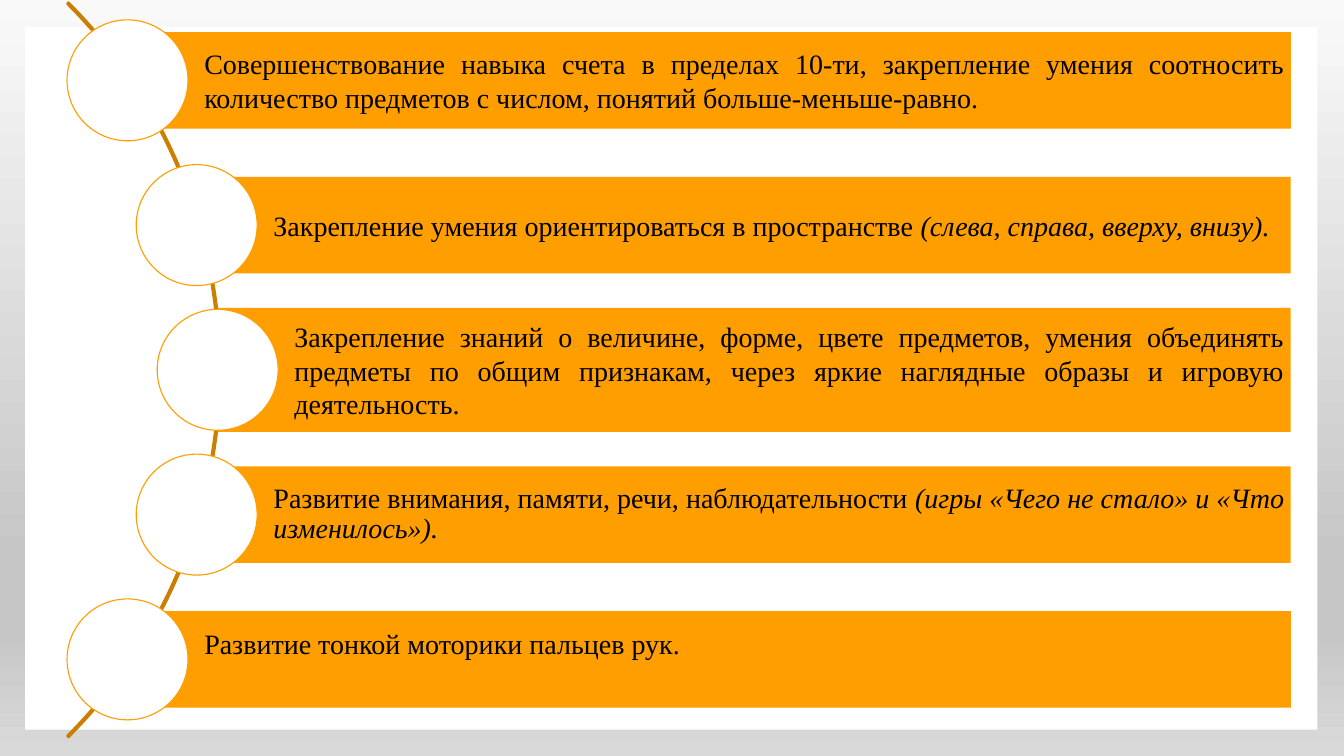
import copy
import math
from pptx import Presentation
from pptx import util as u
from pptx.dml.color import RGBColor
from pptx.enum import shapes, text
from pptx.oxml.ns import qn

COLOURS = {"panel": "FFFFFF", "bar": "FE9E00", "arc": "CB7F00", "ink": "000000"}
BACKDROP = [(0, "F9F9F9"), (0.74, "C6C6C7"), (0.83, "C6C6C7"), (1, "D9D9DA")]
FONT = {"name": "Times New Roman", "size": u.Pt(20)}
GOALS = [
    {"plain": "Совершенствование навыка счета в пределах 10-ти, закрепление умения "
              "соотносить количество предметов с числом, понятий больше-меньше-равно."},
    {"plain": "Закрепление умения ориентироваться в пространстве ",
     "italic": "(слева, справа, вверху, внизу)."},
    {"plain": "Закрепление знаний о величине, форме, цвете предметов, умения объединять "
              "предметы по общим признакам, через яркие наглядные образы и игровую "
              "деятельность.", "height": 88.6},
    {"plain": "Развитие внимания, памяти, речи, наблюдательности ",
     "italic": "(игры «Чего не стало» и «Что изменилось»).", "spacing": 0.9},
    {"plain": "Развитие тонкой моторики пальцев рук.", "bottom": 28},
]


def style(target, values):
    """Set every attribute in values on target."""
    for name, value in values.items():
        setattr(target, name, value)


def add_shape(page, kind, box, fill, line=None, width=0):
    """Add a flat shape in box, given as left, top, width, height in points."""
    shape = page.shapes.add_shape(kind, *[u.Pt(length) for length in box])
    shape.shadow.inherit = False
    shape.fill.solid()
    shape.fill.fore_color.rgb = RGBColor.from_string(COLOURS[fill])
    if line:
        shape.line.color.rgb = RGBColor.from_string(COLOURS[line])
        shape.line.width = u.Pt(width)
    else:
        shape.line.fill.background()
    return shape


def paint_backdrop(page):
    """Fill the page with the vertical grey gradient."""
    fill = page.background.fill
    fill.gradient()
    fill.gradient_angle = 270
    stop_list = next(page.element.iter(qn("a:gsLst")))
    while len(stop_list) < len(BACKDROP):
        stop_list.append(copy.deepcopy(stop_list[0]))
    for stop, (position, colour) in zip(fill.gradient_stops, BACKDROP):
        stop.position = position
        stop.color.rgb = RGBColor.from_string(colour)


def add_arc(page, centre_x, centre_y, radius):
    """Draw the thin arc that links the circles."""
    box = (centre_x - radius, centre_y - radius, 2 * radius, 2 * radius)
    arc = add_shape(page, shapes.MSO_SHAPE.BLOCK_ARC, box, "arc", "arc", 1.5)
    for index, value in enumerate((189, 27, 0.002)):
        arc.adjustments[index] = value


def add_goal(page, box, goal, diameter):
    """Draw one bar with its text, and the circle on its left end."""
    left, top, width, height = box
    bar = add_shape(page, shapes.MSO_SHAPE.RECTANGLE, box, "bar")
    frame = bar.text_frame
    style(frame, {"word_wrap": True, "vertical_anchor": text.MSO_ANCHOR.MIDDLE,
                  "margin_left": u.Pt(54.8), "margin_right": u.Pt(4.6),
                  "margin_top": u.Pt(4.6), "margin_bottom": u.Pt(goal.get("bottom", 4.6))})
    para = frame.paragraphs[0]
    style(para, {"alignment": text.PP_ALIGN.JUSTIFY, "line_spacing": goal.get("spacing", 1.0)})
    for part in ("plain", "italic"):
        if part in goal:
            span = para.add_run()
            span.text = goal[part]
            style(span.font, {**FONT, "italic": part == "italic"})
            span.font.color.rgb = RGBColor.from_string(COLOURS["ink"])
    circle = (left - diameter / 2, top + (height - diameter) / 2, diameter, diameter)
    add_shape(page, shapes.MSO_SHAPE.OVAL, circle, "panel", "bar", 0.79)


def add_goal_list(page, box, pitch=103.4, radius=364.2):
    """Stack the goals in box, with their left ends along a curve."""
    left, top, width, height = box
    middle = top + height / 2
    add_arc(page, -213.5, middle, 371.2)
    for index, goal in enumerate(GOALS):
        offset = (index - len(GOALS) // 2) * pitch
        start = left + math.sqrt(radius ** 2 - offset ** 2) - radius
        bar_height = goal.get("height", 69)
        bar = (start, middle + offset - bar_height / 2, left + width - start, bar_height)
        add_goal(page, bar, goal, 86.4)


def main():
    """Build the deck and save it."""
    deck = Presentation()
    style(deck, {"slide_width": u.Pt(960), "slide_height": u.Pt(540)})
    page = deck.slides.add_slide(deck.slide_layouts[6])
    paint_backdrop(page)
    add_shape(page, shapes.MSO_SHAPE.RECTANGLE, (18, 19.4, 923, 501.8), "panel")
    add_goal_list(page, (155.5, 14.4, 766.5, 499.6))
    deck.save("out.pptx")


if __name__ == "__main__":
    main()
